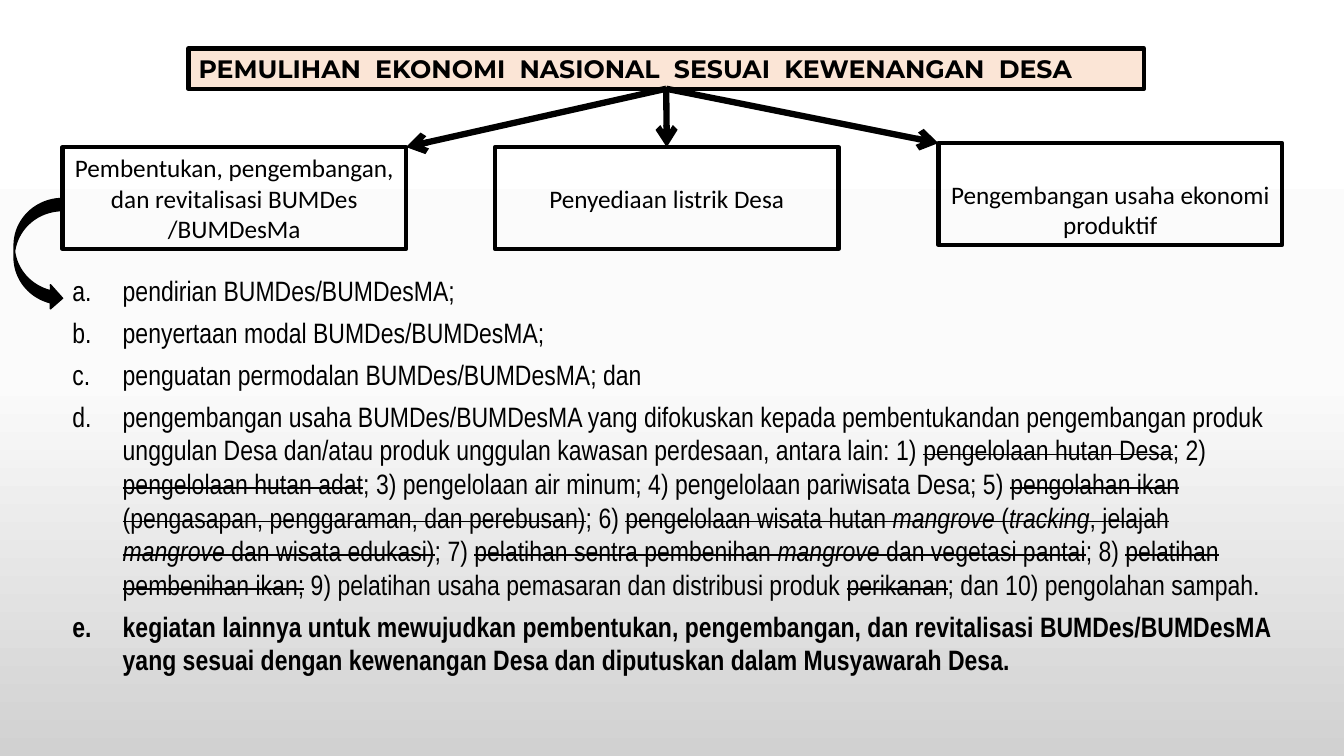
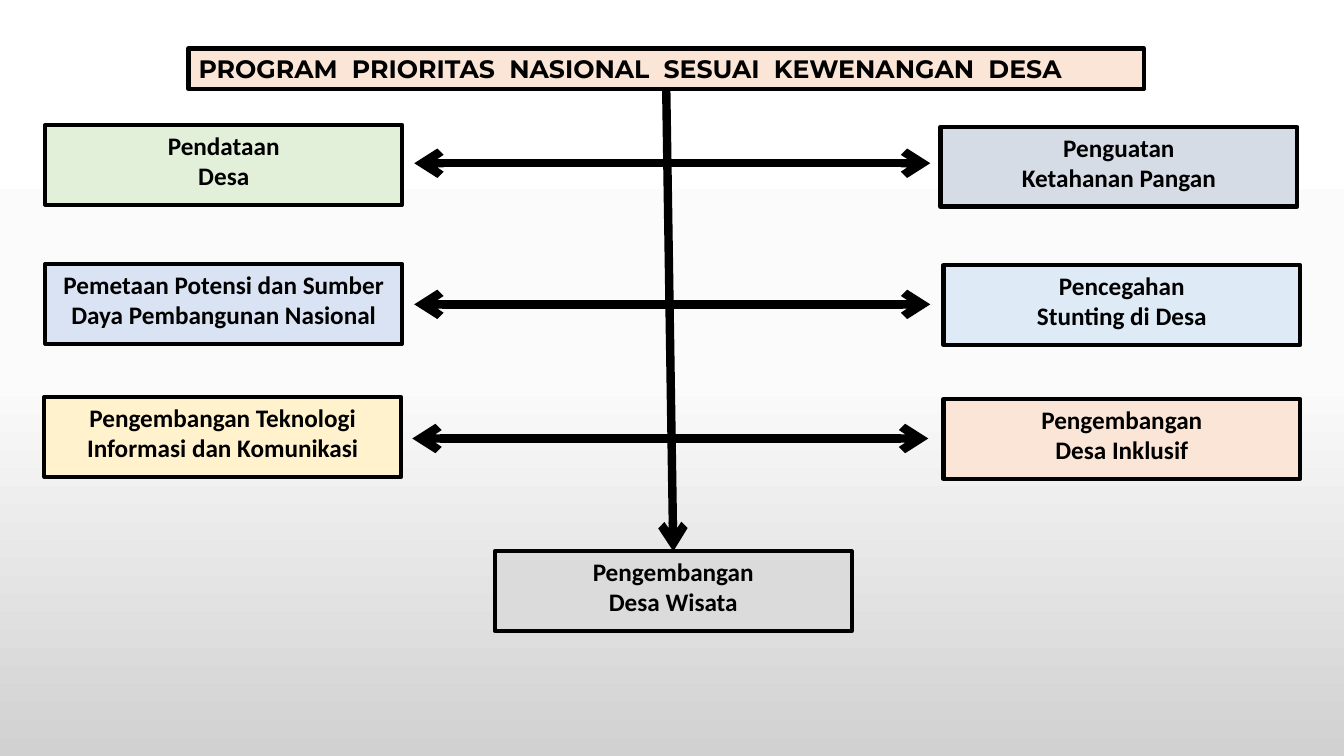
"""Build two slides on national programmes under village authority."""
from copy import deepcopy
from dataclasses import dataclass
from typing import Optional

from lxml.etree import SubElement
from pptx import Presentation
from pptx.dml.color import RGBColor
from pptx.enum.shapes import MSO_CONNECTOR, MSO_SHAPE
from pptx.enum.text import MSO_ANCHOR, MSO_AUTO_SIZE, PP_ALIGN
from pptx.oxml.ns import qn
from pptx.util import Pt

BLACK = "000000"
PEACH = "FBE5D6"
BACKGROUND = [(0, "FFFFFF"), (0.5, "FBFBFB"), (1, "D1D1D1")]
TITLE_FONT = {"name": "Montserrat", "size": Pt(18), "bold": True}
BOX_FONT = {"name": "Calibri", "size": Pt(18)}
LIST_FONT = {"name": "Arial Narrow", "size": Pt(20)}
TOP, MIDDLE, BOTTOM = MSO_ANCHOR.TOP, MSO_ANCHOR.MIDDLE, MSO_ANCHOR.BOTTOM
SIDE_TOP, SIDE_BOTTOM = 0, 2


@dataclass
class Box:
    """A bordered, labelled rectangle measured in points."""
    text: str
    x: float
    y: float
    w: float
    h: float
    fill: Optional[str] = None
    anchor: MSO_ANCHOR = TOP
    bold: bool = False


@dataclass
class Part:
    """A piece of list text with its emphasis."""
    text: str
    strike: bool = False
    italic: bool = False
    bold: bool = False


def themes() -> list[Box]:
    """Return the three recovery themes."""
    size = {"w": 245.5, "h": 72.7}
    return [
        Box("Pembentukan, pengembangan, dan revitalisasi BUMDes /BUMDesMa",
            44.6, 105.1, **size, anchor=MIDDLE),
        Box("Penyediaan listrik Desa", 353.5, 105.1, **size, anchor=MIDDLE),
        Box("Pengembangan usaha ekonomi produktif", 670.3, 102.2, **size, anchor=BOTTOM),
    ]


def programmes() -> list[Box]:
    """Return the priority programmes, the tourism one last."""
    rows = [
        ("Pendataan\nDesa", 32.4, 89.3, "E2F0D9"),
        ("Penguatan\nKetahanan Pangan", 671.8, 90.7, "D6DCE5"),
        ("Pemetaan Potensi dan Sumber Daya Pembangunan Nasional", 32.4, 188.6, "DAE3F3"),
        ("Pencegahan\nStunting di Desa", 673.9, 189.4, "DEEBF7"),
        ("Pengembangan Teknologi Informasi dan Komunikasi", 31.7, 283.7, "FFF2CC"),
        ("Pengembangan\nDesa Inklusif", 673.9, 285.1, PEACH),
        ("Pengembangan\nDesa Wisata", 353.5, 393.8, "DBDBDB"),
    ]
    return [Box(text, x, y, 254.9, 56.9, fill, bold=True) for text, x, y, fill in rows]


ACTIVITIES = [
    [Part("pendirian BUMDes/BUMDesMA;")],
    [Part("penyertaan modal BUMDes/BUMDesMA;")],
    [Part("penguatan permodalan BUMDes/BUMDesMA; dan")],
    [
        Part("pengembangan usaha BUMDes/BUMDesMA yang difokuskan kepada pembentukandan "
             "pengembangan produk unggulan Desa dan/atau produk unggulan kawasan "
             "perdesaan, antara lain: 1) "),
        Part("pengelolaan hutan Desa", strike=True),
        Part("; 2) "),
        Part("pengelolaan hutan adat", strike=True),
        Part("; 3) pengelolaan air minum; 4) pengelolaan pariwisata Desa; 5) "),
        Part("pengolahan ikan (pengasapan, penggaraman, dan perebusan)", strike=True),
        Part("; 6) "),
        Part("pengelolaan wisata hutan ", strike=True),
        Part("mangrove", strike=True, italic=True),
        Part(" (", strike=True),
        Part("tracking", strike=True, italic=True),
        Part(", jelajah ", strike=True),
        Part("mangrove", strike=True, italic=True),
        Part(" dan wisata edukasi)", strike=True),
        Part("; 7) "),
        Part("pelatihan sentra pembenihan ", strike=True),
        Part("mangrove", strike=True, italic=True),
        Part(" dan vegetasi pantai", strike=True),
        Part("; 8) "),
        Part("pelatihan pembenihan ikan;", strike=True),
        Part(" 9) pelatihan usaha pemasaran dan distribusi produk "),
        Part("perikanan", strike=True),
        Part("; dan 10) pengolahan sampah."),
    ],
    [Part("kegiatan lainnya untuk mewujudkan pembentukan, pengembangan, dan revitalisasi "
          "BUMDes/BUMDesMA yang sesuai dengan kewenangan Desa dan diputuskan dalam "
          "Musyawarah Desa.", bold=True)],
]


def rgb(color: str) -> RGBColor:
    """Turn a hex string into a colour."""
    return RGBColor.from_string(color)


def apply(obj, values: dict) -> None:
    """Set each attribute named in the format values."""
    for name, value in values.items():
        setattr(obj, name, value)


def add_run(p, text: str, font: dict):
    """Append a black run in the given font."""
    r = p.add_run()
    r.text = text
    apply(r.font, font)
    r.font.color.rgb = rgb(BLACK)
    return r


def outline(sp, fill: Optional[str], width: float) -> None:
    """Give a shape its fill and black border."""
    if fill:
        sp.fill.solid()
        sp.fill.fore_color.rgb = rgb(fill)
    else:
        sp.fill.background()
    sp.line.color.rgb = rgb(BLACK)
    sp.line.width = Pt(width)


def write(tf, text: str, font: dict, align: PP_ALIGN, anchor: MSO_ANCHOR) -> None:
    """Write one paragraph per line of text."""
    apply(tf, {"word_wrap": True, "auto_size": MSO_AUTO_SIZE.NONE, "vertical_anchor": anchor})
    for i, line in enumerate(text.split("\n")):
        p = tf.paragraphs[0] if i == 0 else tf.add_paragraph()
        p.alignment = align
        add_run(p, line, font)


def set_background(prs) -> None:
    """Put the vertical grey gradient on the master."""
    fill = prs.slide_master.background.fill
    fill.gradient()
    fill.gradient_angle = 270
    stops = prs.slide_master.element.find(".//" + qn("p:bgPr")).find(".//" + qn("a:gsLst"))
    stops.insert(1, deepcopy(stops[0]))
    for stop, (position, color) in zip(fill.gradient_stops, BACKGROUND):
        stop.position = position
        stop.color.rgb = rgb(color)


def add_slide(prs, title: str):
    """Add a title-only slide with the framed title band."""
    s = prs.slides.add_slide(prs.slide_layouts[5])
    sp = s.shapes.title
    apply(sp, {"left": Pt(134.6), "top": Pt(34.6), "width": Pt(682.6), "height": Pt(28.8)})
    outline(sp, PEACH, 3)
    write(sp.text_frame, title, TITLE_FONT, PP_ALIGN.LEFT, MIDDLE)
    return s


def add_box(s, box: Box):
    """Draw a labelled rectangle."""
    sp = s.shapes.add_shape(MSO_SHAPE.RECTANGLE, Pt(box.x), Pt(box.y), Pt(box.w), Pt(box.h))
    sp.shadow.inherit = False
    outline(sp, box.fill, 3)
    write(sp.text_frame, box.text, {**BOX_FONT, "bold": box.bold}, PP_ALIGN.CENTER, box.anchor)
    return sp


def add_arrow(s, start: tuple, end: tuple, width: float, ends: tuple = ("tailEnd",)):
    """Draw a straight black arrow between two points."""
    cxn = s.shapes.add_connector(MSO_CONNECTOR.STRAIGHT, *map(Pt, start + end))
    cxn.line.color.rgb = rgb(BLACK)
    cxn.line.width = Pt(width)
    props = cxn.element.spPr
    for tag in ends:
        SubElement(props.find(qn("a:ln")), qn(f"a:{tag}"), type="arrow")
    SubElement(props, qn("a:effectLst"))
    return cxn


def add_activities(s) -> None:
    """Write the lettered list of activities."""
    tf = s.shapes.add_textbox(Pt(44.6), Pt(191.5), Pt(871.2), Pt(298)).text_frame
    tf.word_wrap = True
    for i, parts in enumerate(ACTIVITIES):
        p = tf.paragraphs[0] if i == 0 else tf.add_paragraph()
        p.space_after = Pt(6)
        props = p._p.get_or_add_pPr()
        props.set("marL", str(Pt(36)))
        props.set("indent", str(-Pt(36)))
        SubElement(props, qn("a:buFont"), typeface="+mj-lt")
        SubElement(props, qn("a:buAutoNum"), type="alphaLcPeriod")
        for part in parts:
            r = add_run(p, part.text, {**LIST_FONT, "bold": part.bold, "italic": part.italic})
            if part.strike:
                r._r.get_or_add_rPr().set("strike", "sngStrike")


def build_recovery(prs) -> None:
    """Build the economic recovery slide."""
    s = add_slide(prs, "PEMULIHAN  EKONOMI  NASIONAL  SESUAI  KEWENANGAN  DESA")
    left, middle, right = themes()
    boxes = [add_box(s, box) for box in (left, middle, right)]
    hub = (475.9, 63.4)
    targets = [(left.x + left.w, left.y), (middle.x + middle.w / 2, middle.y), (right.x, right.y)]
    arrows = [add_arrow(s, hub, target, 4.5) for target in targets]
    for arrow in arrows:
        arrow.begin_connect(s.shapes.title, SIDE_BOTTOM)
    arrows[1].end_connect(boxes[1], SIDE_TOP)
    add_activities(s)
    sp = s.shapes.add_shape(MSO_SHAPE.CURVED_RIGHT_ARROW, Pt(10.1), Pt(141.8), Pt(34.6), Pt(79.9))
    sp.shadow.inherit = False
    outline(sp, BLACK, 1)


def build_priorities(prs) -> None:
    """Build the priority programmes slide."""
    s = add_slide(prs, "PROGRAM  PRIORITAS  NASIONAL  SESUAI  KEWENANGAN  DESA")
    boxes = [add_box(s, box) for box in programmes()]
    trunk = add_arrow(s, (475.9, 63.4), (481, 393.8), 6)
    trunk.begin_connect(s.shapes.title, SIDE_BOTTOM)
    trunk.end_connect(boxes[-1], SIDE_TOP)
    for x, y in [(295.9, 116.6), (295.9, 217.4), (294.5, 313.2)]:
        add_arrow(s, (x, y), (x + 368.6, y), 6, ("headEnd", "tailEnd"))


def main() -> None:
    """Create and save the presentation."""
    prs = Presentation()
    apply(prs, {"slide_width": Pt(960), "slide_height": Pt(540)})
    set_background(prs)
    build_recovery(prs)
    build_priorities(prs)
    prs.save("out.pptx")


if __name__ == "__main__":
    main()
